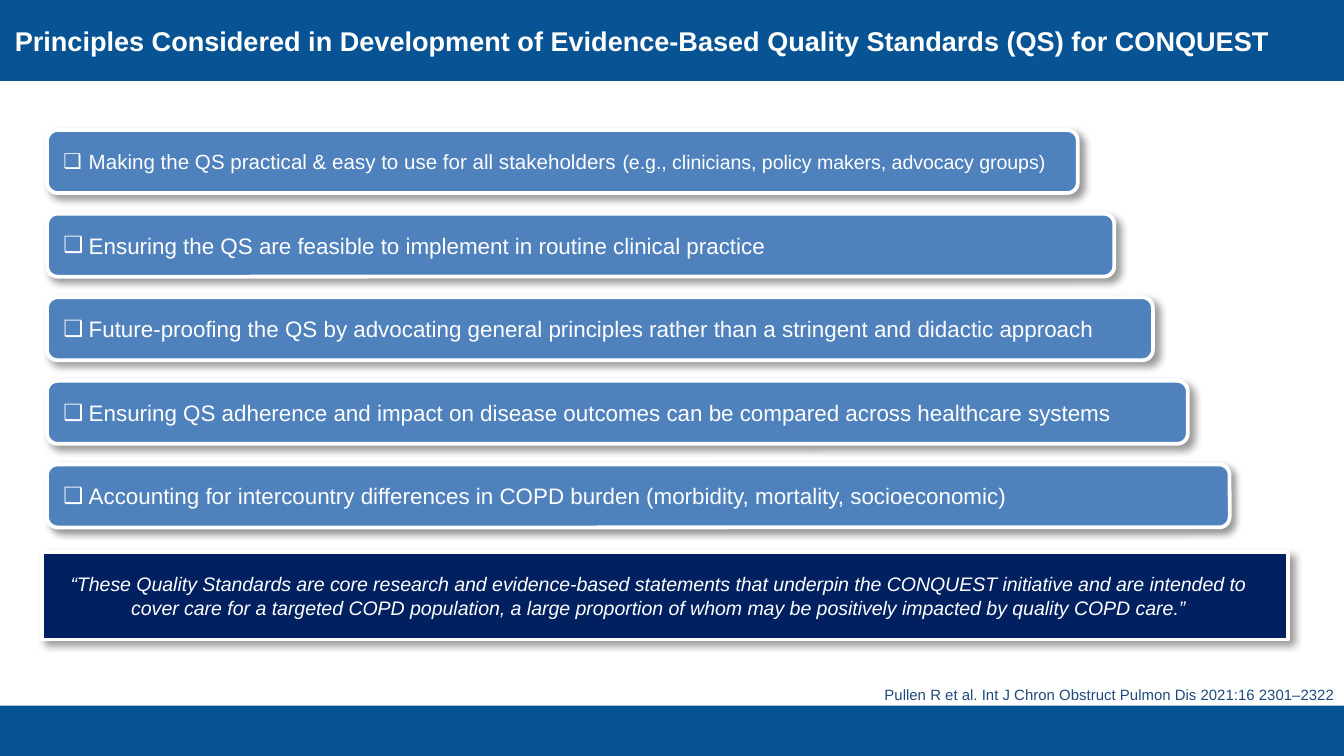
from lxml import etree
from pptx import Presentation
from pptx.dml.color import RGBColor
from pptx.enum import shapes, text
from pptx.oxml.ns import qn
from pptx.util import Cm, Pt

WHITE = RGBColor(0xFF, 0xFF, 0xFF)
BAND_BLUE = RGBColor(0x08, 0x53, 0x94)
BAR_BLUE = RGBColor(0x4F, 0x81, 0xBD)
NAVY = RGBColor(0x00, 0x20, 0x60)
CITATION_BLUE = RGBColor(0x1F, 0x49, 0x7D)

SLIDE_WIDTH, SLIDE_HEIGHT = 25.4, 14.29
BAR_LEFT, BAR_TOP, BAR_HEIGHT, BAR_STEP = 0.89, 2.46, 1.19, 1.58

# Bar width in cm, then the runs as (text, size in points)
PRINCIPLES = [
    (19.48, [("Making the QS practical & easy to use for all stakeholders ", 11),
             ("(e.g., clinicians, policy makers, advocacy groups)", 10.5)]),
    (20.17, [("Ensuring the QS are feasible to implement in routine clinical practice", 12)]),
    (20.9, [("Future-proofing the QS by advocating general principles rather than "
             "a stringent and didactic approach", 12)]),
    (21.56, [("Ensuring QS adherence and impact on disease outcomes can be compared "
              "across healthcare systems", 12)]),
    (22.35, [("Accounting for intercountry differences in COPD burden "
              "(morbidity, mortality, socioeconomic)", 12)]),
]
TITLE = ("Principles Considered in Development of Evidence-Based Quality Standards (QS) "
         "for CONQUEST")
QUOTE = ("“These Quality Standards are core research and evidence-based statements that "
         "underpin the CONQUEST initiative and are intended to cover care for a targeted "
         "COPD population, a large proportion of whom may be positively impacted by "
         "quality COPD care.”")
CITATION = "Pullen R et al. Int J Chron Obstruct Pulmon Dis 2021:16 2301–2322"


def add_box(slide, kind, left, top, width, height, fill):
    shape = slide.shapes.add_shape(kind, Cm(left), Cm(top), Cm(width), Cm(height))
    shape.fill.solid()
    shape.fill.fore_color.rgb = fill
    shape.line.fill.background()
    shape.shadow.inherit = False
    return shape


def add_raised_box(slide, kind, left, top, width, height, fill):
    """Add a box with a white outline and a soft shadow to the lower right."""
    shape = add_box(slide, kind, left, top, width, height, fill)
    shape.line.color.rgb = WHITE
    shape.line.width = Pt(2)
    effects = shape._element.spPr.find(qn("a:effectLst"))
    shadow = etree.SubElement(effects, qn("a:outerShdw"), blurRad=str(Pt(4)),
                              dist=str(Pt(3)), dir="2700000", algn="tl", rotWithShape="0")
    color = etree.SubElement(shadow, qn("a:srgbClr"), val="000000")
    etree.SubElement(color, qn("a:alpha"), val="40000")
    return shape


def format_font(font, size, color, bold=False, italic=False):
    font.name = "Arial"
    font.size = Pt(size)
    font.color.rgb = color
    font.bold = bold
    font.italic = italic


def add_text(slide, left, top, width, height, content, size, color,
             alignment=text.PP_ALIGN.LEFT, bold=False, italic=False):
    box = slide.shapes.add_textbox(Cm(left), Cm(top), Cm(width), Cm(height))
    box.text_frame.word_wrap = True
    box.text_frame.text = content
    paragraph = box.text_frame.paragraphs[0]
    paragraph.alignment = alignment
    format_font(paragraph.runs[0].font, size, color, bold, italic)
    return box


def add_bullet(paragraph, character):
    properties = paragraph._p.get_or_add_pPr()
    properties.set("marL", str(Cm(0.48)))
    properties.set("indent", str(Cm(-0.48)))
    etree.SubElement(properties, qn("a:buFont"), typeface="Arial")
    etree.SubElement(properties, qn("a:buChar"), char=character)


def add_principle(slide, top, width, runs):
    bar = add_raised_box(slide, shapes.MSO_SHAPE.ROUNDED_RECTANGLE,
                         BAR_LEFT, top, width, BAR_HEIGHT, BAR_BLUE)
    bar.text_frame.word_wrap = True
    bar.text_frame.vertical_anchor = text.MSO_ANCHOR.MIDDLE
    paragraph = bar.text_frame.paragraphs[0]
    paragraph.alignment = text.PP_ALIGN.LEFT
    add_bullet(paragraph, "❑")
    for content, size in runs:
        run = paragraph.add_run()
        run.text = content
        format_font(run.font, size, WHITE)


def add_title(slide):
    add_box(slide, shapes.MSO_SHAPE.RECTANGLE, 0, 0, SLIDE_WIDTH, 1.53, BAND_BLUE)
    title = add_text(slide, 0.1, 0.28, 25.3, 1.02, TITLE, 14.5, WHITE, bold=True)
    frame = title.text_frame
    frame.margin_left = frame.margin_right = Cm(0.18)
    frame.margin_top = frame.margin_bottom = Cm(0.18)


def add_quote(slide):
    add_raised_box(slide, shapes.MSO_SHAPE.RECTANGLE, 0.79, 10.44, 23.55, 1.65, NAVY)
    add_text(slide, 0.79, 10.69, 23.34, 1.14, QUOTE, 10.5, WHITE,
             text.PP_ALIGN.CENTER, italic=True)


def add_footer(slide):
    add_box(slide, shapes.MSO_SHAPE.RECTANGLE, 0, 13.34, SLIDE_WIDTH, 0.95, BAND_BLUE)
    add_text(slide, 14.58, 12.83, 10.9, 0.61, CITATION, 8, CITATION_BLUE,
             text.PP_ALIGN.RIGHT)


def main():
    presentation = Presentation()
    presentation.slide_width = Cm(SLIDE_WIDTH)
    presentation.slide_height = Cm(SLIDE_HEIGHT)
    slide = presentation.slides.add_slide(presentation.slide_layouts[6])
    add_title(slide)
    for index, (width, runs) in enumerate(PRINCIPLES):
        add_principle(slide, BAR_TOP + index * BAR_STEP, width, runs)
    add_quote(slide)
    add_footer(slide)
    presentation.save("out.pptx")


if __name__ == "__main__":
    main()
